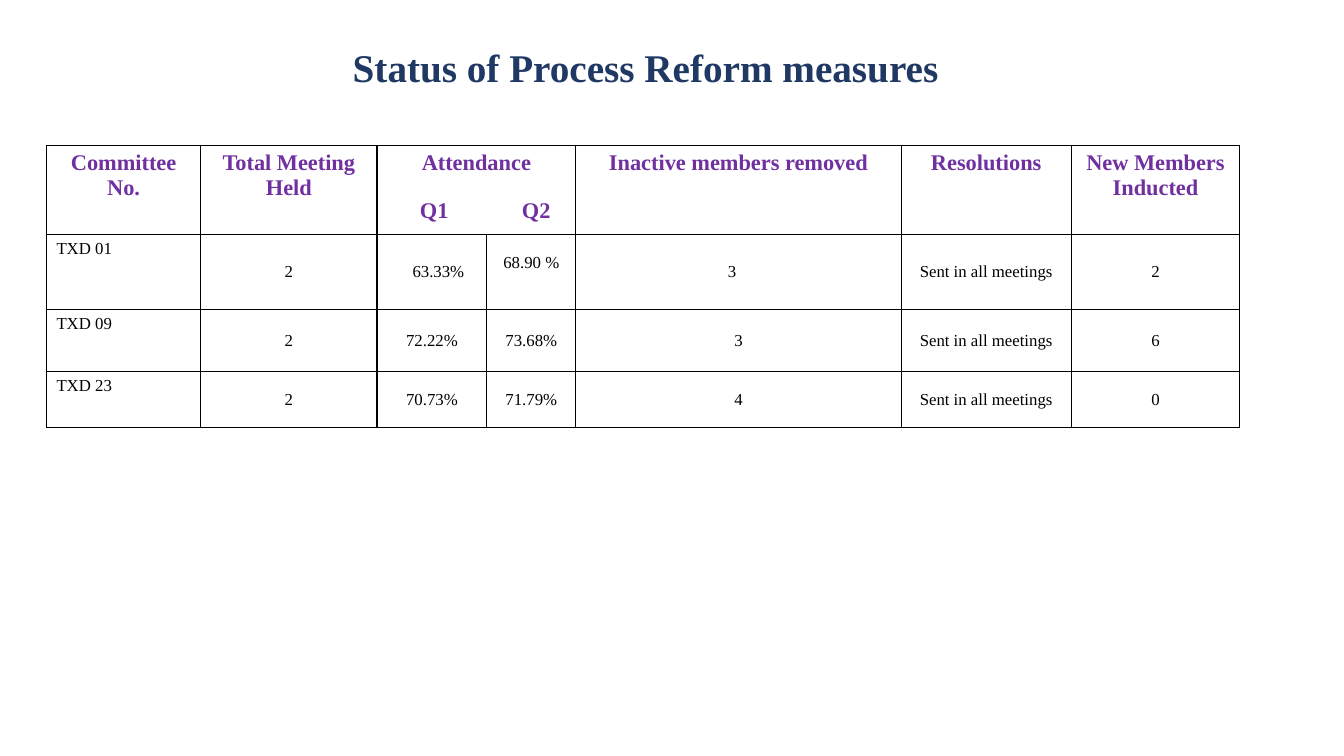
from lxml import etree
from pptx import Presentation
from pptx.dml.color import RGBColor
from pptx.enum.text import MSO_ANCHOR, PP_ALIGN
from pptx.oxml.ns import qn
from pptx.util import Cm, Pt

LEFT, CENTER = PP_ALIGN.LEFT, PP_ALIGN.CENTER
TOP, MIDDLE, BOTTOM = MSO_ANCHOR.TOP, MSO_ANCHOR.MIDDLE, MSO_ANCHOR.BOTTOM

FONT = "Times New Roman"
NAVY, PURPLE, BLACK = "203864", "7030A0", "000000"

COLUMN_WIDTHS = [3.89, 4.44, 2.77, 2.24, 8.2, 4.29, 4.24]
ROW_HEIGHTS = [2.26, 1.88, 1.57, 1.4]
HEADERS = ["Committee No.", "Total Meeting Held", "Attendance\n\tQ1\tQ2", "",
           "Inactive members removed", "Resolutions", "New Members Inducted"]
COMMITTEES = [
    ["TXD 01", "2", "63.33%", "68.90 %", "3", "Sent in all meetings", "2"],
    ["TXD 09", "2", "72.22%", "73.68%", "3", "Sent in all meetings", "6"],
    ["TXD 23", "2", "70.73%", "71.79%", "4", "Sent in all meetings", "0"],
]


def color(value):
    return RGBColor.from_string(value)


def format_text(frame, size, shade, bold, align):
    for para in frame.paragraphs:
        para.alignment = align
        for span in para.runs:
            span.font.name = FONT
            span.font.size = Pt(size)
            span.font.bold = bold
            span.font.color.rgb = color(shade)


def add_borders(cell):
    """Draw a thin black line on each side, ahead of the cell's fill."""
    properties = cell._tc.get_or_add_tcPr()
    for position, side in enumerate(("lnL", "lnR", "lnT", "lnB")):
        line = etree.Element(qn(f"a:{side}"), w=str(Pt(1)))
        fill = etree.SubElement(line, qn("a:solidFill"))
        etree.SubElement(fill, qn("a:srgbClr"), val=BLACK)
        properties.insert(position, line)


def add_tab_stops(para, positions):
    tabs = etree.SubElement(para._p.get_or_add_pPr(), qn("a:tabLst"))
    for position in positions:
        etree.SubElement(tabs, qn("a:tab"), pos=str(Cm(position)), algn="l")


def fill_cell(cell, text, size, shade, bold, align, anchor):
    cell.text_frame.text = text
    cell.vertical_anchor = anchor
    cell.fill.background()
    format_text(cell.text_frame, size, shade, bold, align)
    add_borders(cell)


def add_title(page, text):
    box = page.shapes.add_textbox(Cm(8.64), Cm(0.58), Cm(18.08), Cm(1.85))
    frame = box.text_frame
    frame.word_wrap = True
    frame.vertical_anchor = BOTTOM
    frame.text = text
    frame.paragraphs[0].line_spacing = 0.9
    format_text(frame, 28, NAVY, True, LEFT)


def add_committee_table(page):
    table = page.shapes.add_table(
        len(ROW_HEIGHTS), len(COLUMN_WIDTHS), Cm(1.17), Cm(3.66),
        Cm(sum(COLUMN_WIDTHS)), Cm(sum(ROW_HEIGHTS))).table
    table.first_row = False
    table.horz_banding = False
    for column, width in zip(table.columns, COLUMN_WIDTHS):
        column.width = Cm(width)
    for row, height in zip(table.rows, ROW_HEIGHTS):
        row.height = Cm(height)

    for index, text in enumerate(HEADERS):
        fill_cell(table.cell(0, index), text, 16, PURPLE, True, CENTER, TOP)
    for row, values in enumerate(COMMITTEES, start=1):
        for index, text in enumerate(values):
            align, anchor = (CENTER, MIDDLE) if index else (LEFT, TOP)
            fill_cell(table.cell(row, index), text, 12, BLACK, False, align, anchor)
    return table


def arrange_attendance_header(table):
    """Span both quarters and set their labels on tab stops."""
    attendance = table.cell(0, 2)
    attendance.merge(table.cell(0, 3))
    quarters = attendance.text_frame.paragraphs[1]
    quarters.alignment = LEFT
    quarters.space_before = Pt(17)
    add_tab_stops(quarters, [0.83, 3.4])


def shift_first_row(table):
    """Move three values of the first committee slightly off centre."""
    table.cell(1, 2).margin_left = Cm(0.58)
    table.cell(1, 3).margin_bottom = Cm(0.59)
    table.cell(1, 4).margin_right = Cm(0.58)


def main():
    deck = Presentation()
    deck.slide_width, deck.slide_height = Cm(33.87), Cm(19.05)
    page = deck.slides.add_slide(deck.slide_layouts[6])
    table = add_committee_table(page)
    arrange_attendance_header(table)
    shift_first_row(table)
    add_title(page, "Status of Process Reform measures")
    deck.save("out.pptx")


if __name__ == "__main__":
    main()
